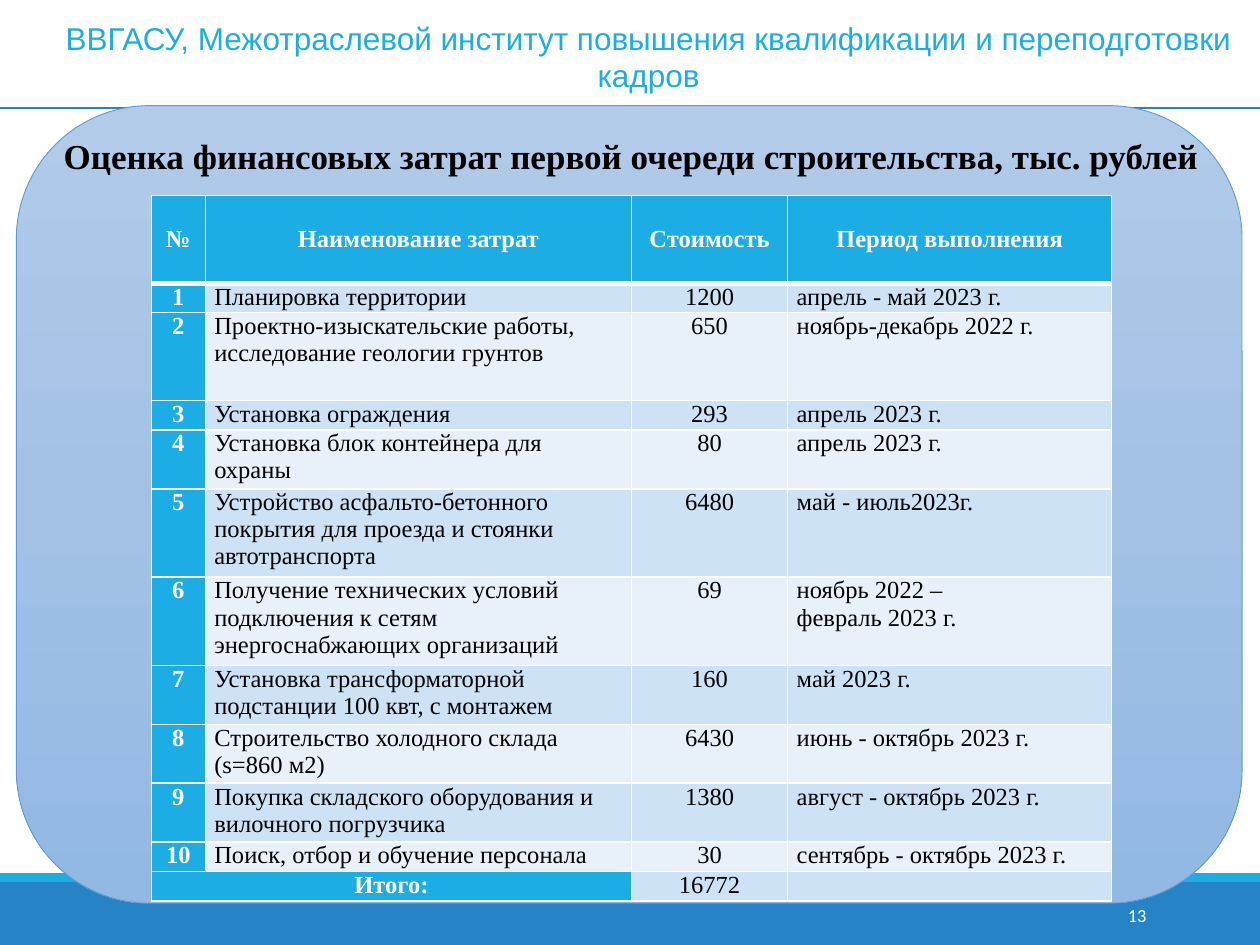
import copy
import pptx
import pptx.util
import pptx.dml.color
import pptx.enum.shapes
import pptx.enum.text
import pptx.oxml.ns
import pptx.oxml.xmlchemy

Cm, Pt = pptx.util.Cm, pptx.util.Pt
ALIGN = pptx.enum.text.PP_ALIGN
ANCHOR = pptx.enum.text.MSO_ANCHOR
SHAPE = pptx.enum.shapes.MSO_SHAPE
qn = pptx.oxml.ns.qn
OxmlElement = pptx.oxml.xmlchemy.OxmlElement

COLORS = {
    "blue": "2683C6", "cyan": "1CADE4", "white": "FFFFFF", "black": "000000",
    "outline": "5B9BD5", "band_dark": "CDE3F5", "band_light": "E8F1FA",
}
PANEL_STOPS = [(0, "B1CBE9"), (0.5, "A3C1E5"), (1, "92B9E4")]
SERIF = "Times New Roman"

ORGANISATION = "ВВГАСУ, Межотраслевой институт повышения квалификации и переподготовки кадров"
TITLE = "Оценка финансовых затрат первой очереди строительства, тыс. рублей"
PAGE = "13"
HEADER = ["№", "Наименование затрат", "Стоимость", "Период выполнения"]
COSTS = [
    ("Планировка территории", 1200, "апрель - май 2023 г.", 1),
    ("Проектно-изыскательские работы, исследование геологии грунтов", 650, "ноябрь-декабрь 2022 г.", 3),
    ("Установка ограждения", 293, "апрель 2023 г.", 1),
    ("Установка блок контейнера для охраны", 80, "апрель 2023 г.", 2),
    ("Устройство асфальто-бетонного покрытия для проезда и стоянки автотранспорта", 6480, "май - июль2023г.", 3),
    ("Получение технических условий подключения к сетям энергоснабжающих организаций", 69,
     "ноябрь 2022 –\nфевраль 2023 г.", 3),
    ("Установка трансформаторной подстанции 100 квт, с монтажем", 160, "май 2023 г.", 2),
    ("Строительство холодного склада (s=860 м2)", 6430, "июнь - октябрь 2023 г.", 2),
    ("Покупка складского оборудования и вилочного погрузчика", 1380, "август - октябрь 2023 г.", 2),
    ("Поиск, отбор и обучение персонала", 30, "сентябрь - октябрь 2023 г.", 1),
]
TOTAL = ["Итого:", "", "16772", ""]
COL_WIDTHS = [1.09, 8.59, 3.15, 6.53]
HEADER_LINES, TOTAL_LINES, LINE_HEIGHT = 3, 1, 0.59


def rgb(value):
    return pptx.dml.color.RGBColor.from_string(value)


def style(tf, font, size, color, align, bold=False):
    for p in tf.paragraphs:
        p.alignment = align
        p.font.name = font
        p.font.size = Pt(size)
        p.font.bold = bold
        p.font.color.rgb = rgb(COLORS[color])


def add_box(slide, kind, left, top, width, height):
    sp = slide.shapes.add_shape(kind, Cm(left), Cm(top), Cm(width), Cm(height))
    sp.shadow.inherit = False
    return sp


def add_bar(slide, top, height, color):
    sp = add_box(slide, SHAPE.RECTANGLE, 0, top, 25.4, height)
    sp.fill.solid()
    sp.fill.fore_color.rgb = rgb(COLORS[color])
    sp.line.fill.background()


def add_text(slide, box, text, font, size, color, align, anchor, bold=False, wrap=True):
    tf = slide.shapes.add_textbox(*map(Cm, box)).text_frame
    tf.text = text
    tf.word_wrap = wrap
    tf.vertical_anchor = anchor
    style(tf, font, size, color, align, bold)


def add_rule(slide, top):
    line = slide.shapes.add_connector(
        pptx.enum.shapes.MSO_CONNECTOR.STRAIGHT, 0, Cm(top), Cm(25.4), Cm(top))
    line.line.color.rgb = rgb(COLORS["blue"])
    line.line.width = Pt(1.25)
    line._element.spPr.append(OxmlElement("a:effectLst"))


def add_panel(slide):
    sp = add_box(slide, SHAPE.ROUNDED_RECTANGLE, 0.33, 2.13, 24.71, 16.08)
    sp.adjustments[0] = 0.167
    sp.fill.gradient()
    sp.fill.gradient_angle = 270
    stops = sp._element.spPr.find(".//" + qn("a:gsLst"))
    stops.insert(1, copy.deepcopy(stops[0]))
    for stop, (position, color) in zip(sp.fill.gradient_stops, PANEL_STOPS):
        stop.position = position
        stop.color.rgb = rgb(color)
    sp.line.color.rgb = rgb(COLORS["outline"])
    sp.line.width = Pt(0.5)


def set_borders(cell, top, bottom):
    tcPr = cell._tc.get_or_add_tcPr()
    widths = {"a:lnL": 1, "a:lnR": 1, "a:lnT": top, "a:lnB": bottom}
    for i, (tag, width) in enumerate(widths.items()):
        ln = OxmlElement(tag)
        ln.set("w", str(Pt(width)))
        fill = OxmlElement("a:solidFill")
        color = OxmlElement("a:srgbClr")
        color.set("val", COLORS["white"])
        fill.append(color)
        ln.append(fill)
        tcPr.insert(i, ln)


def add_cost_table(slide):
    rows = [HEADER]
    rows += [[str(n), name, str(cost), period]
             for n, (name, cost, period, _) in enumerate(COSTS, 1)]
    rows.append(TOTAL)
    lines = [HEADER_LINES] + [cost[-1] for cost in COSTS] + [TOTAL_LINES]
    last = len(rows) - 1
    table = slide.shapes.add_table(
        len(rows), len(HEADER), Cm(3.05), Cm(3.94),
        Cm(sum(COL_WIDTHS)), Cm(sum(lines) * LINE_HEIGHT)).table
    for column, width in zip(table.columns, COL_WIDTHS):
        column.width = Cm(width)
    for r, values in enumerate(rows):
        table.rows[r].height = Cm(lines[r] * LINE_HEIGHT)
        for c, value in enumerate(values):
            cell = table.cell(r, c)
            cell.text = value
            cell.margin_left = cell.margin_right = Cm(0.18)
            cell.margin_top = cell.margin_bottom = 0
            cell.vertical_anchor = ANCHOR.MIDDLE if r == 0 else ANCHOR.TOP
            heading = r == 0 or c == 0
            band = "band_dark" if r % 2 else "band_light"
            cell.fill.solid()
            cell.fill.fore_color.rgb = rgb(COLORS["cyan" if heading else band])
            align = ALIGN.CENTER if heading or c == 2 else ALIGN.LEFT
            style(cell.text_frame, SERIF, 14, "white" if heading else "black", align, heading)
            set_borders(cell, 3 if r == 1 else 1, 3 if r == 0 else 1)
    table.cell(last, 0).merge(table.cell(last, 1))


def main():
    prs = pptx.Presentation()
    prs.slide_width, prs.slide_height = Cm(25.4), Cm(19.05)
    slide = prs.slides.add_slide(prs.slide_layouts[6])
    add_bar(slide, 17.78, 1.27, "blue")
    add_bar(slide, 17.6, 0.18, "cyan")
    add_text(slide, (20.62, 17.93, 2.74, 1.02), PAGE, "Calibri", 10.5, "white",
             ALIGN.RIGHT, ANCHOR.MIDDLE)
    add_rule(slide, 2.18)
    add_panel(slide)
    add_text(slide, (0.97, 0.25, 24.21, 1.8), ORGANISATION, "Arial", 18, "cyan",
             ALIGN.CENTER, ANCHOR.TOP)
    add_cost_table(slide)
    add_text(slide, (0.94, 2.57, 23.57, 1.12), TITLE, SERIF, 20, "black",
             ALIGN.CENTER, ANCHOR.MIDDLE, bold=True, wrap=False)
    prs.save("out.pptx")


if __name__ == "__main__":
    main()
